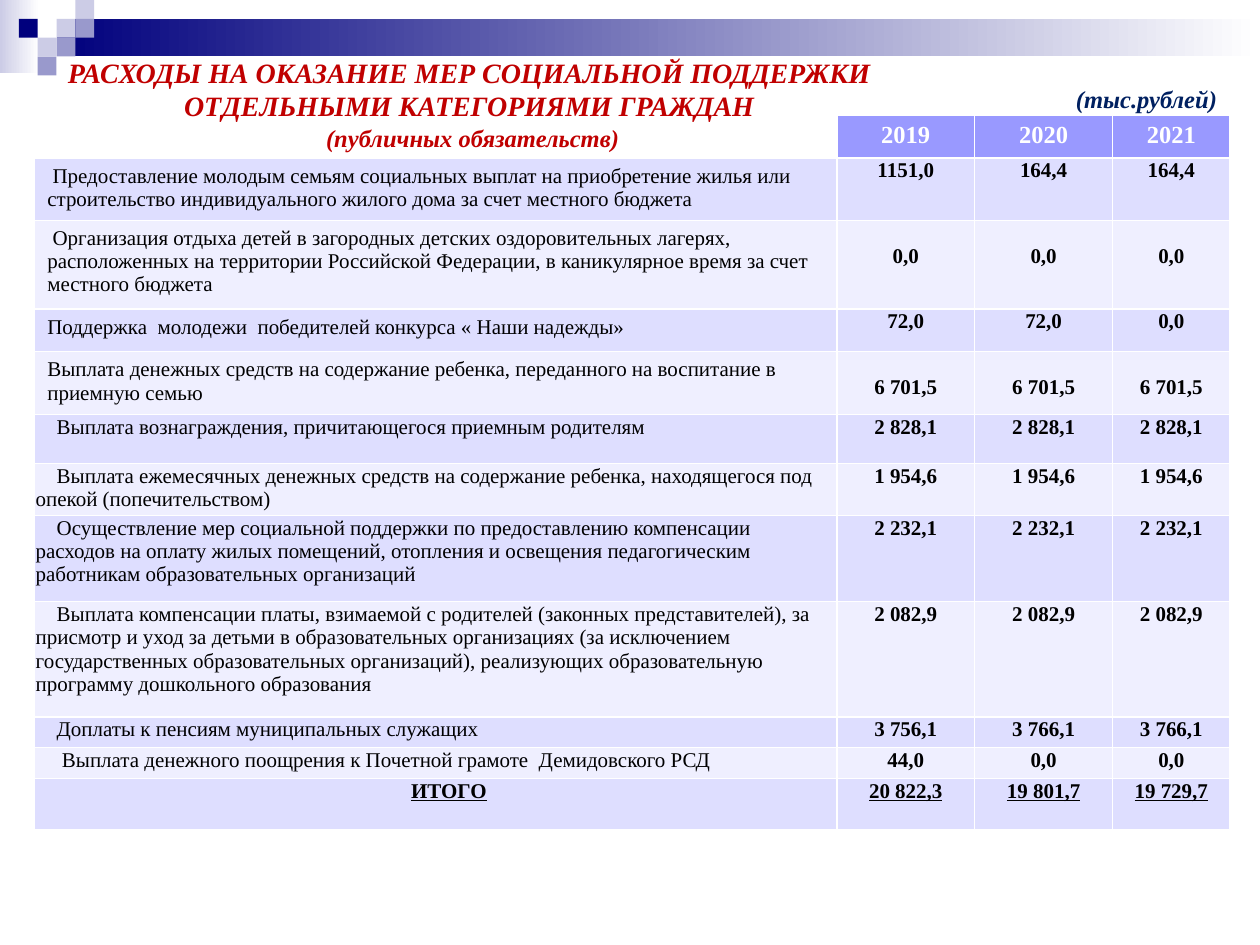
import pptx
import pptx.dml.color
import pptx.enum.shapes
import pptx.enum.text
import pptx.util
from pptx.util import Cm

RGBColor = pptx.dml.color.RGBColor
NAVY = RGBColor(0x00, 0x00, 0x7D)
LAVENDER = RGBColor(0xCC, 0xCC, 0xE6)
VIOLET = RGBColor(0x99, 0x99, 0xCC)
HEADER = RGBColor(0x99, 0x99, 0xFF)
BANDS = (RGBColor(0xDE, 0xDE, 0xFF), RGBColor(0xEF, 0xEF, 0xFF))
RED = RGBColor(0xC0, 0x00, 0x00)
DARK_BLUE = RGBColor(0x00, 0x20, 0x60)
WHITE = RGBColor(0xFF, 0xFF, 0xFF)
BLACK = RGBColor(0x00, 0x00, 0x00)
CENTER = pptx.enum.text.PP_ALIGN.CENTER


def format_paragraph(paragraph, size, color, bold=True, italic=False, underline=False):
    for run in paragraph.runs:
        font = run.font
        font.name = "Times New Roman"
        font.size = pptx.util.Pt(size)
        font.color.rgb = color
        font.bold, font.italic, font.underline = bold, italic, underline


def add_rectangle(left, top, width, height, *colors):
    """Add a borderless rectangle; two colours make a left-to-right gradient."""
    shape = slide.shapes.add_shape(pptx.enum.shapes.MSO_SHAPE.RECTANGLE,
                                   Cm(left), Cm(top), Cm(width), Cm(height))
    shape.shadow.inherit = False
    shape.line.fill.background()
    if len(colors) == 1:
        shape.fill.solid()
        shape.fill.fore_color.rgb = colors[0]
    else:
        shape.fill.gradient()
        shape.fill.gradient_angle = 0
        for stop, color in zip(shape.fill.gradient_stops, colors):
            stop.color.rgb = color


presentation = pptx.Presentation()
presentation.slide_width = Cm(25.4)
presentation.slide_height = Cm(19.05)
slide = presentation.slides.add_slide(presentation.slide_layouts[5])

# Header band and mosaic of squares
add_rectangle(0, 0, 0.79, 1.47, LAVENDER, WHITE)
add_rectangle(1.14, 0.38, 24.26, 0.76, NAVY, WHITE)
SQUARE = 0.38
squares = [(3, 1, LAVENDER), (4, 0, LAVENDER), (4, 1, VIOLET), (2, 2, LAVENDER),
           (1, 1, NAVY), (3, 2, VIOLET), (2, 3, VIOLET)]
for column, row, color in squares:
    add_rectangle(column * SQUARE, row * SQUARE, SQUARE, SQUARE, color)

# Table: text, first-line indent in points, values, row height
header = ["2019", "2020", "2021"]
expenses = [
    ("Предоставление молодым семьям социальных выплат на приобретение жилья или "
     "строительство индивидуального жилого дома за счет местного бюджета",
     3, ["1151,0", "164,4", "164,4"], 1.25),
    ("Организация отдыха детей в загородных детских оздоровительных лагерях, "
     "расположенных на территории Российской Федерации, в каникулярное время за счет "
     "местного бюджета", 3, ["0,0", "0,0", "0,0"], 1.79),
    ("Поддержка  молодежи  победителей конкурса « Наши надежды»",
     0, ["72,0", "72,0", "0,0"], 0.86),
    ("Выплата денежных средств на содержание ребенка, переданного на воспитание в "
     "приемную семью", 0, ["6 701,5"] * 3, 1.27),
    ("Выплата вознаграждения, причитающегося приемным родителям",
     12, ["2 828,1"] * 3, 0.98),
    ("Выплата ежемесячных денежных средств на содержание ребенка, находящегося под "
     "опекой (попечительством)", 12, ["1 954,6"] * 3, 1.05),
    ("Осуществление мер социальной поддержки по предоставлению компенсации расходов "
     "на оплату жилых помещений, отопления и освещения педагогическим работникам "
     "образовательных организаций", 12, ["2 232,1"] * 3, 1.74),
    ("Выплата компенсации платы, взимаемой с родителей (законных представителей), за "
     "присмотр и уход за детьми в образовательных организациях (за исключением "
     "государственных образовательных организаций), реализующих образовательную "
     "программу дошкольного образования", 12, ["2 082,9"] * 3, 2.32),
    ("Доплаты к пенсиям муниципальных служащих",
     12, ["3 756,1", "3 766,1", "3 766,1"], 0.62),
    ("Выплата денежного поощрения к Почетной грамоте  Демидовского РСД",
     15, ["44,0", "0,0", "0,0"], 0.62),
    ("ИТОГО", 15, ["20 822,3", "19 801,7", "19 729,7"], 1.03),
]
WIDE_MARGIN_ROWS = range(1, 5)
LOWERED_VALUE_ROWS = (2, 4)
TOTAL_ROW = len(expenses)

table = slide.shapes.add_table(len(expenses) + 1, 4, Cm(0.7), Cm(2.33),
                               Cm(24.1), Cm(14.4)).table
for column, width in zip(table.columns, (16.17, 2.78, 2.78, 2.37)):
    column.width = Cm(width)

table.rows[0].height = Cm(0.86)
corner = table.cell(0, 0)
corner.fill.background()
corner.margin_top = corner.margin_bottom = 0
for column, year in enumerate(header, start=1):
    cell = table.cell(0, column)
    cell.text_frame.text = year
    cell.fill.solid()
    cell.fill.fore_color.rgb = HEADER
    cell.text_frame.paragraphs[0].alignment = CENTER
    format_paragraph(cell.text_frame.paragraphs[0], 14, WHITE)

for row, (name, indent, values, height) in enumerate(expenses, start=1):
    table.rows[row].height = Cm(height)
    is_total = row == TOTAL_ROW
    for column, text in enumerate([name, *values]):
        cell = table.cell(row, column)
        cell.text_frame.text = text
        cell.fill.solid()
        cell.fill.fore_color.rgb = BANDS[(row - 1) % 2]
        is_value = column > 0
        if is_value or row not in WIDE_MARGIN_ROWS:
            cell.margin_left = cell.margin_right = cell.margin_top = Cm(0.02)
            cell.margin_bottom = 0
        if is_value and row in LOWERED_VALUE_ROWS:
            cell.margin_top = Cm(0.49)
        paragraph = cell.text_frame.paragraphs[0]
        if is_value or is_total:
            paragraph.alignment = CENTER
        if not is_value:
            paragraph._p.get_or_add_pPr().set("indent", str(pptx.util.Pt(indent)))
        format_paragraph(paragraph, 12, BLACK, bold=is_value or is_total,
                         underline=is_total)

# Title, brought in front of the table whose empty corner it overlaps
title = slide.shapes.title
slide.shapes._spTree.append(title._element)
title.left, title.top, title.width, title.height = Cm(0.4), Cm(0.99), Cm(18.26), Cm(2.24)
title.text_frame.text = ("РАСХОДЫ НА ОКАЗАНИЕ МЕР СОЦИАЛЬНОЙ ПОДДЕРЖКИ \n"
                         "ОТДЕЛЬНЫМИ КАТЕГОРИЯМИ ГРАЖДАН \n"
                         "(публичных обязательств)")
title.text_frame.word_wrap = True
title.text_frame.auto_size = pptx.enum.text.MSO_AUTO_SIZE.NONE
title.text_frame.vertical_anchor = pptx.enum.text.MSO_ANCHOR.TOP
for paragraph, size in zip(title.text_frame.paragraphs, (16, 16, 14)):
    paragraph.alignment = CENTER
    format_paragraph(paragraph, size, RED, italic=True)

# Unit of measure
unit_box = slide.shapes.add_textbox(Cm(21.44), Cm(1.57), Cm(3.38), Cm(0.86))
unit_box.text_frame.text = "(тыс.рублей)"
unit_box.text_frame.word_wrap = False
format_paragraph(unit_box.text_frame.paragraphs[0], 14, DARK_BLUE, italic=True)

presentation.save("out.pptx")
